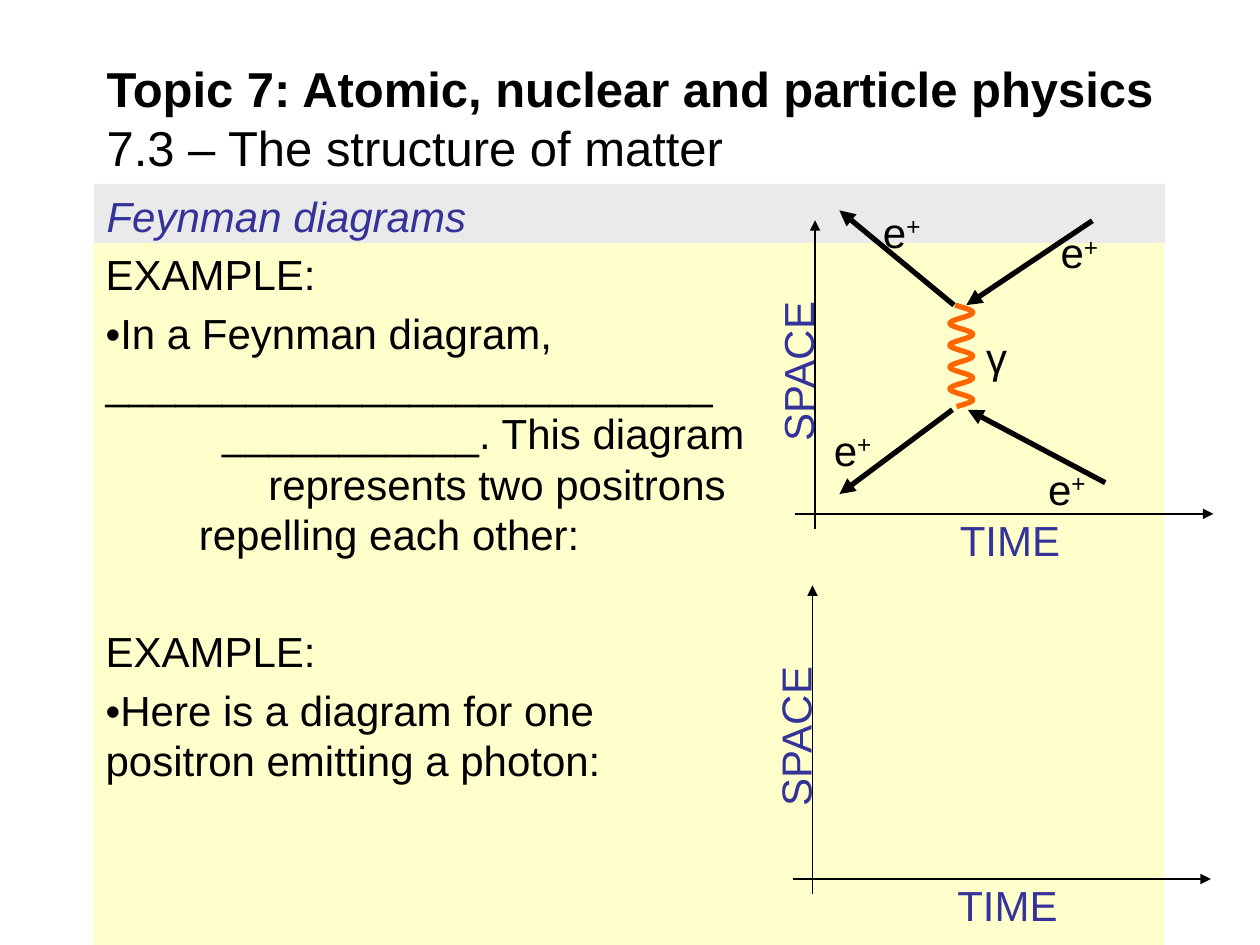
from dataclasses import dataclass
from math import cos, pi

from lxml.etree import SubElement
from pptx import Presentation
from pptx.dml.color import RGBColor as Rgb
from pptx.enum.shapes import MSO_CONNECTOR as Connector, MSO_SHAPE as Shape
from pptx.enum.text import MSO_ANCHOR as Anchor, PP_ALIGN as Align
from pptx.oxml.ns import qn
from pptx.util import Cm, Pt


@dataclass(frozen=True)
class Theme:
    font: str = "Arial"
    ink: Rgb = Rgb(0x00, 0x00, 0x00)
    accent: Rgb = Rgb(0x33, 0x33, 0x99)
    photon: Rgb = Rgb(0xFF, 0x66, 0x00)
    panel: Rgb = Rgb(0xFF, 0xFF, 0xCC)
    band: Rgb = Rgb(0xEA, 0xEA, 0xEA)
    title_size: Pt = Pt(28)
    text_size: Pt = Pt(24)
    thin: Pt = Pt(0.75)
    thick: Pt = Pt(3)


THEME = Theme()

# Text, left indent in cm, space before in points
BODY = [
    ("EXAMPLE:", 0, 0),
    ("•In a Feynman diagram,", 0, 4.8),
    ("_" * 26, 0, 0),
    ("_" * 11 + ". This diagram", 2.35, 0),
    ("represents two positrons", 3.28, 0),
    ("repelling each other:", 1.88, 0),
    ("EXAMPLE:", 0, 38),
    ("•Here is a diagram for one", 0, 4.8),
    ("positron emitting a photon:", 0, 0),
]

# Tail and tip of each arrow in cm
POSITRON_ARROWS = [
    ((19.23, 6.15), (16.92, 4.24)),
    ((19.2, 8.26), (16.92, 9.96)),
    ((22.28, 9.73), (19.51, 8.26)),
    ((22.02, 4.45), (19.48, 6.15)),
]
POSITRON_LABELS = [(17.55, 4.04), (21.13, 4.45), (16.56, 8.43), (20.88, 9.22)]


def style(para, color=THEME.ink, size=THEME.text_size):
    para.alignment = Align.LEFT
    para.font.name = THEME.font
    para.font.size = size
    para.font.color.rgb = color


def add_panel(page, left, top, width, height, fill):
    panel = page.shapes.add_shape(
        Shape.RECTANGLE, Cm(left), Cm(top), Cm(width), Cm(height))
    panel.shadow.inherit = False
    panel.fill.solid()
    panel.fill.fore_color.rgb = fill
    panel.line.fill.background()
    panel.text_frame.word_wrap = True
    panel.text_frame.vertical_anchor = Anchor.TOP
    return panel.text_frame


def add_title(page):
    box = page.shapes.add_textbox(Cm(1.9), Cm(1.22), Cm(22.6), Cm(2.31))
    box.text_frame.word_wrap = True
    box.text_frame.vertical_anchor = Anchor.MIDDLE
    para = box.text_frame.paragraphs[0]
    style(para, size=THEME.title_size)
    span = para.add_run()
    span.text = "Topic 7: Atomic, nuclear and particle physics"
    span.font.bold = True
    para.add_line_break()
    para.add_run().text = "7.3 – The structure of matter"


def add_body(page):
    frame = add_panel(page, 1.88, 4.88, 21.59, 19.05 - 4.88, THEME.panel)
    for index, (text, indent, space) in enumerate(BODY):
        para = frame.add_paragraph() if index else frame.paragraphs[0]
        para.text = text
        para.space_before = Pt(space)
        style(para)
        if indent:
            para._p.get_or_add_pPr().set("marL", str(Cm(indent)))


def add_heading(page):
    frame = add_panel(page, 1.9, 3.71, 21.59, 1.19, THEME.band)
    para = frame.paragraphs[0]
    para.text = "Feynman diagrams"
    style(para, THEME.accent)
    para.font.italic = True


def add_label(page, text, left, top, width, color=THEME.ink, rotation=0, raised=""):
    """Add a one-line label, with an optional superscript after it."""
    box = page.shapes.add_textbox(Cm(left), Cm(top), Cm(width), Cm(1.27))
    box.rotation = rotation
    box.text_frame.word_wrap = True
    para = box.text_frame.paragraphs[0]
    style(para, color)
    para.add_run().text = text
    if raised:
        span = para.add_run()
        span.text = raised
        span.font._element.set("baseline", "30000")


def add_arrow(page, tail, tip, weight):
    arrow = page.shapes.add_connector(
        Connector.STRAIGHT, *(Cm(length) for length in (*tail, *tip)))
    arrow.line.color.rgb = THEME.ink
    arrow.line.width = weight
    SubElement(arrow.line._get_or_add_ln(), qn("a:tailEnd"), type="triangle")
    SubElement(arrow._element.spPr, qn("a:effectLst"))


def add_axes(page, x, y):
    """Add space and time axes that cross at x, y."""
    add_arrow(page, (x, y + 0.3), (x, y - 5.92), THEME.thin)
    add_arrow(page, (x - 0.4, y), (x + 8.03, y), THEME.thin)
    add_label(page, "SPACE", x - 2.31, y - 3.81, 3.91, THEME.accent, rotation=270)
    add_label(page, "TIME", x + 2.67, y - 0.12, 2.69, THEME.accent)


def add_photon(page):
    center, swing, top, height, period, crest = 19.38, 0.23, 6.15, 2.05, 0.44, 6.3
    steps = 120
    heights = [top + height * step / steps for step in range(steps + 1)]
    points = [(Cm(center + swing * cos(2 * pi * (y - crest) / period)), Cm(y))
              for y in heights]
    builder = page.shapes.build_freeform(*points[0])
    builder.add_line_segments(points[1:], close=False)
    wave = builder.convert_to_shape()
    wave.shadow.inherit = False
    wave.fill.background()
    wave.line.color.rgb = THEME.photon
    wave.line.width = THEME.thick


def add_repulsion(page):
    add_photon(page)
    for tail, tip in POSITRON_ARROWS:
        add_arrow(page, tail, tip, THEME.thick)
    for left, top in POSITRON_LABELS:
        add_label(page, "e", left, top, 1.9, raised="+")
    add_label(page, "γ", 19.63, 6.55, 1.22)


def main():
    deck = Presentation()
    deck.slide_width, deck.slide_height = Cm(25.4), Cm(19.05)
    page = deck.slides.add_slide(deck.slide_layouts[6])
    add_body(page)
    add_heading(page)
    add_title(page)
    add_repulsion(page)
    add_axes(page, 16.43, 10.36)
    add_axes(page, 16.38, 17.72)
    deck.save("out.pptx")


if __name__ == "__main__":
    main()
